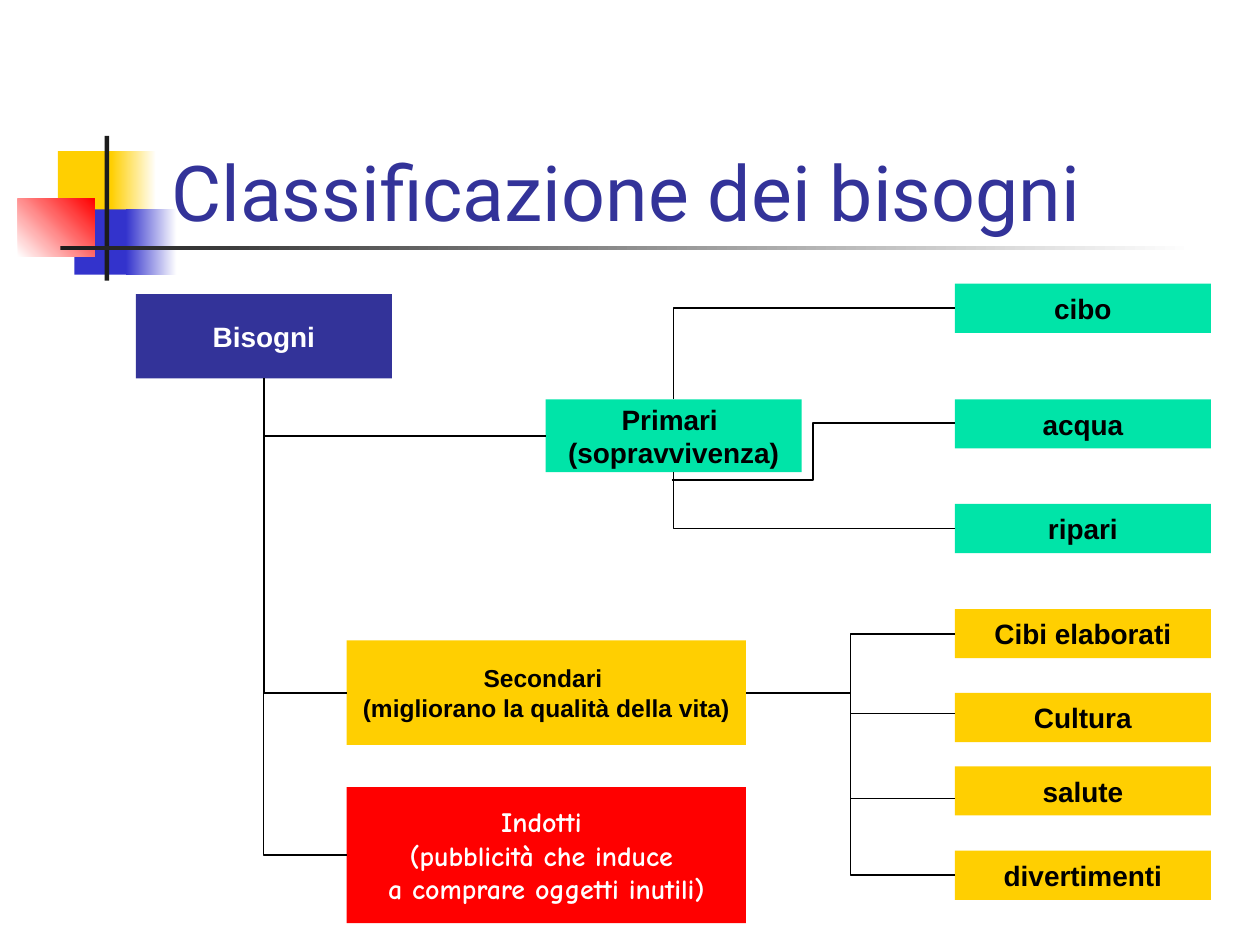
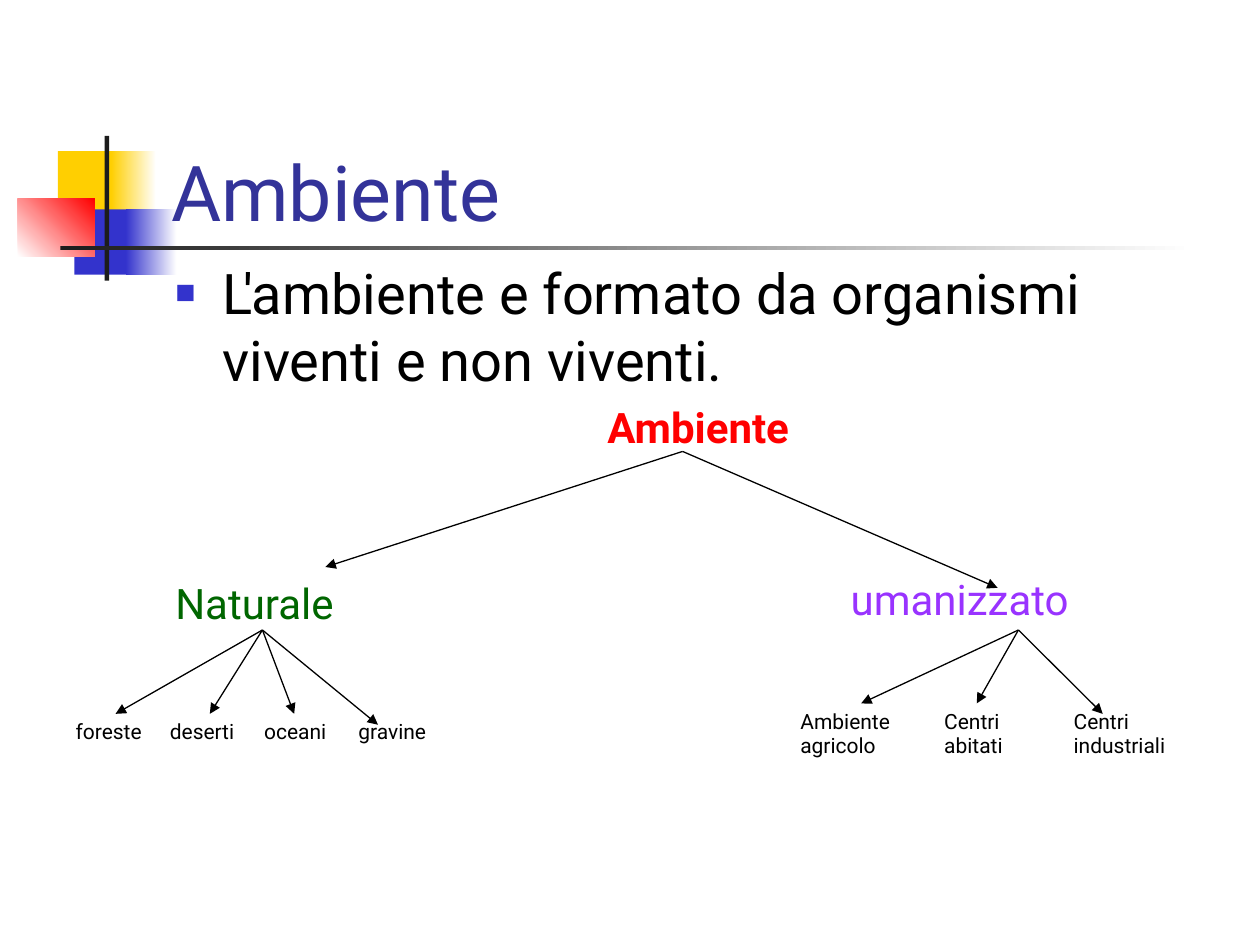
"""Build two slides on the classification of needs and on the environment."""
from lxml.etree import SubElement
from pptx import Presentation
from pptx.dml.color import RGBColor
from pptx.enum.shapes import MSO_CONNECTOR, MSO_SHAPE
from pptx.enum.text import MSO_ANCHOR, MSO_AUTO_SIZE, PP_ALIGN
from pptx.oxml.ns import qn
from pptx.util import Cm, Pt

COLORS = {
    "indigo": "333399", "blue": "3333CC", "yellow": "FFCF01", "red": "FF0000",
    "teal": "00E4A8", "green": "006600", "violet": "9933FF",
    "dark": "1C1C1C", "black": "000000", "white": "FFFFFF",
}
TOP, LEFT, BOTTOM, RIGHT = range(4)
TITLE_BOX = (3.2, 1.73, 21.64, 3.18)
BODY_BOX = (3.28, 5.08, 21.59, 11.96)
HUMANIZED_BOX = (16.9, 11.43, 5.6, 1.27)
LEAF_LEFT, LEAF_WIDTH, LEAF_HEIGHT = 19.25, 5.16, 0.99
TRUNK_X = 17.15


def color(name):
    return RGBColor.from_string(COLORS[name])


def cm(*lengths):
    return [Cm(length) for length in lengths]


def set_font(font, name, size, color_name, bold=False):
    font.name, font.size, font.bold = name, Pt(size), bold
    font.color.rgb = color(color_name)


def add_rectangle(slide, box, fill_name, end_name=None, angle=0):
    shape = slide.shapes.add_shape(MSO_SHAPE.RECTANGLE, *cm(*box))
    shape.shadow.inherit = False
    shape.line.fill.background()
    if end_name:
        shape.fill.gradient()
        shape.fill.gradient_angle = angle
        for stop, name in zip(shape.fill.gradient_stops, (fill_name, end_name)):
            stop.color.rgb = color(name)
    else:
        shape.fill.solid()
        shape.fill.fore_color.rgb = color(fill_name)
    return shape


def decorate_master(presentation, slide):
    """Draw the squares and rules on the slide, then move them to the master."""
    ornaments = [
        ((1.17, 3.05, 1.22, 1.32), "yellow"),
        ((2.24, 3.05, 0.91, 1.32), "yellow", "white"),
        ((1.5, 4.22, 1.17, 1.32), "blue"),
        ((2.54, 4.22, 1.02, 1.32), "blue", "white"),
        ((0.36, 4.01, 1.55, 1.17), "white", "red", 45),
        ((2.11, 2.74, 0.09, 2.92), "dark"),
        ((1.22, 4.95, 22.86, 0.1), "dark", "white"),
    ]
    master_tree = presentation.slide_master.shapes._spTree
    for number, ornament in enumerate(ornaments, 101):
        element = add_rectangle(slide, *ornament)._element
        element.nvSpPr.cNvPr.set("id", str(number))
        master_tree.append(element)


def place(shape, box):
    shape.left, shape.top, shape.width, shape.height = cm(*box)
    shape.text_frame.word_wrap = True
    shape.text_frame.auto_size = MSO_AUTO_SIZE.NONE


def add_title(slide, text):
    title = slide.shapes.title
    place(title, TITLE_BOX)
    title.text_frame.vertical_anchor = MSO_ANCHOR.BOTTOM
    title.text_frame.text = text
    paragraph = title.text_frame.paragraphs[0]
    paragraph.alignment = PP_ALIGN.LEFT
    set_font(paragraph.font, "Roboto", 44, "indigo")


def add_box(slide, box, lines, fill_name, text_color="black", size=16, font="Arial"):
    shape = add_rectangle(slide, box, fill_name)
    frame = shape.text_frame
    frame.word_wrap = False
    frame.vertical_anchor = MSO_ANCHOR.MIDDLE
    for index, line in enumerate(lines):
        paragraph = frame.add_paragraph() if index else frame.paragraphs[0]
        paragraph.text = line
        paragraph.alignment = PP_ALIGN.CENTER
        set_font(paragraph.font, font, size, text_color, True)
    return shape


def add_label(slide, box, text, color_name):
    label = slide.shapes.add_textbox(*cm(*box))
    label.text_frame.word_wrap = True
    label.text_frame.text = text
    set_font(label.text_frame.paragraphs[0].font, "Roboto", 24, color_name)


def add_line(slide, start, end, kind=MSO_CONNECTOR.STRAIGHT, width=0.75, arrow=False):
    connector = slide.shapes.add_connector(kind, *cm(*start, *end))
    connector.line.color.rgb = color("black")
    connector.line.width = Pt(width)
    properties = connector._element.spPr
    if arrow:
        SubElement(properties.find(qn("a:ln")), qn("a:tailEnd"), type="triangle")
    SubElement(properties, qn("a:effectLst"))
    return connector


def join_boxes(slide, child, parent, side, width=1):
    """Run an elbow from the child's left side to the given side of the parent."""
    connector = add_line(slide, (0, 0), (1, 1), MSO_CONNECTOR.ELBOW, width)
    connector.begin_connect(child, LEFT)
    connector.end_connect(parent, side)
    if side != RIGHT:
        connector._element.spPr.find(qn("a:prstGeom")).set("prst", "bentConnector2")


def add_arrows(slide, start, ends):
    for end in ends:
        add_line(slide, start, end, arrow=True)


def add_text_row(slide, left, top, widths, texts):
    table = slide.shapes.add_table(1, len(texts), *cm(left, top, sum(widths), 1.62)).table
    table.first_row = table.horz_banding = False
    for column, cell, width, text in zip(table.columns, table.rows[0].cells, widths, texts):
        column.width = Cm(width)
        cell.fill.background()
        cell.text = text
        paragraph = cell.text_frame.paragraphs[0]
        paragraph.space_before = Pt(2.4)
        set_font(paragraph.font, "Roboto", 12, "black")


def set_bullet(paragraph):
    properties = paragraph._p.get_or_add_pPr()
    properties.set("marL", str(Cm(0.95)))
    properties.set("indent", str(Cm(-0.95)))
    bullet_color = SubElement(properties, qn("a:buClr"))
    SubElement(bullet_color, qn("a:srgbClr"), val=COLORS["blue"])
    SubElement(properties, qn("a:buSzPct"), val="60000")
    SubElement(properties, qn("a:buChar"), char="■")


def set_plain(paragraph):
    properties = paragraph._p.get_or_add_pPr()
    properties.set("marL", "0")
    properties.set("indent", "0")
    SubElement(properties, qn("a:buNone"))


def fill_environment_body(slide):
    body = slide.placeholders[1]
    place(body, BODY_BOX)
    frame = body.text_frame
    frame.text = "L'ambiente e formato da organismi viventi e non viventi."
    definition = frame.paragraphs[0]
    set_bullet(definition)
    set_font(definition.font, "Roboto", 32, "black")

    root = frame.add_paragraph()
    root.text = "Ambiente"
    set_plain(root)
    root.alignment = PP_ALIGN.CENTER
    set_font(root.font, "Roboto", 24, "red", True)

    natural = frame.add_paragraph()
    natural.text = "Naturale"
    set_plain(natural)
    natural.space_before = Pt(72)
    set_font(natural.font, "Roboto", 24, "green")


def build_needs(slide):
    add_title(slide, "Classificazione dei bisogni")
    needs = add_box(slide, (2.74, 5.93, 5.16, 1.7), ["Bisogni"], "indigo", "white")
    primary = add_box(slide, (11, 8.05, 5.16, 1.47),
                      ["Primari ", "(sopravvivenza)"], "teal")
    secondary = add_box(slide, (6.99, 12.91, 8.05, 2.11),
                        ["Secondari ", "(migliorano la qualità della vita)"],
                        "yellow", size=14)
    induced = add_box(slide, (6.99, 15.87, 8.05, 2.74),
                      ["Indotti ", "(pubblicità che induce ", "a comprare oggetti inutili)"],
                      "red", "white", font="Comic Neue")
    leaves = {}
    for text, top, fill_name in (
        ("cibo", 5.72, "teal"), ("acqua", 8.05, "teal"), ("ripari", 10.16, "teal"),
        ("Cibi elaborati", 12.28, "yellow"), ("Cultura", 13.97, "yellow"),
        ("salute", 15.45, "yellow"), ("divertimenti", 17.15, "yellow"),
    ):
        box = (LEAF_LEFT, top, LEAF_WIDTH, LEAF_HEIGHT)
        leaves[text] = add_box(slide, box, [text], fill_name)

    join_boxes(slide, primary, needs, BOTTOM)
    join_boxes(slide, secondary, needs, BOTTOM)
    join_boxes(slide, induced, needs, BOTTOM, 0.75)
    join_boxes(slide, leaves["cibo"], primary, TOP)
    join_boxes(slide, leaves["ripari"], primary, BOTTOM)
    join_boxes(slide, leaves["Cibi elaborati"], secondary, RIGHT)
    join_boxes(slide, leaves["divertimenti"], secondary, RIGHT)
    add_line(slide, (13.54, 9.68), (LEAF_LEFT, 8.53), MSO_CONNECTOR.ELBOW, 1)
    for y in (14.39, 16.09):
        add_line(slide, (TRUNK_X, y), (LEAF_LEFT, y))


def build_environment(slide):
    add_title(slide, "Ambiente")
    fill_environment_body(slide)
    add_label(slide, HUMANIZED_BOX, "umanizzato", "violet")
    add_text_row(slide, 1.27, 14.39, (1.9, 1.9, 1.9, 2.12),
                 ("foreste", "deserti", "oceani", "gravine"))
    add_text_row(slide, 15.88, 14.18, (2.9, 2.61, 3.17),
                 ("Ambiente agricolo", "Centri abitati", "Centri industriali"))
    add_arrows(slide, (13.76, 9.1), [(6.56, 11.43), (20.11, 11.85)])
    add_arrows(slide, (5.29, 12.7),
               [(2.33, 14.39), (4.23, 14.39), (5.93, 14.39), (7.62, 14.61)])
    add_arrows(slide, (20.53, 12.7),
               [(17.36, 14.18), (19.69, 14.18), (22.23, 14.39)])


def main():
    presentation = Presentation()
    presentation.slide_width, presentation.slide_height = cm(25.4, 19.05)
    layouts = presentation.slide_layouts
    needs_slide = presentation.slides.add_slide(layouts.get_by_name("Title Only"))
    decorate_master(presentation, needs_slide)
    build_needs(needs_slide)
    build_environment(presentation.slides.add_slide(layouts.get_by_name("Title and Content")))
    presentation.save("out.pptx")


if __name__ == "__main__":
    main()
